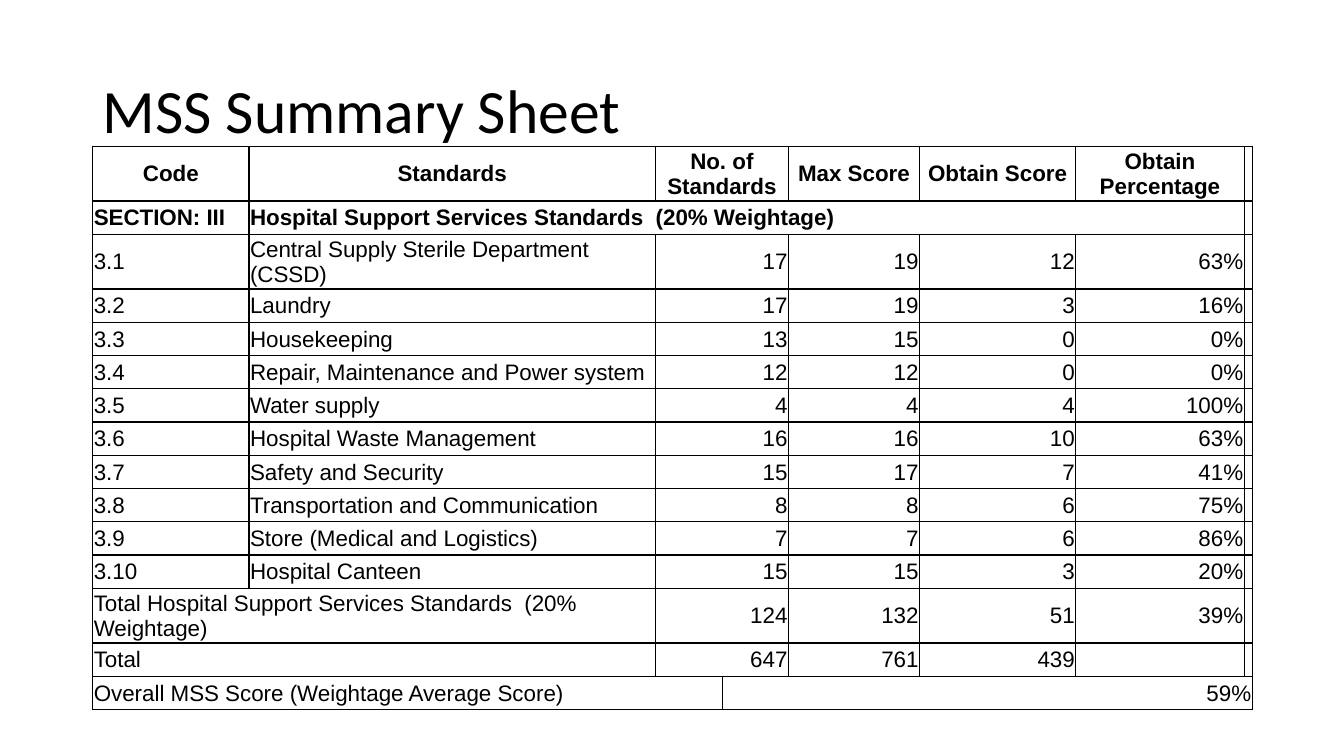
from dataclasses import dataclass

from lxml import etree
from pptx import Presentation
from pptx.dml.color import RGBColor
from pptx.enum.text import MSO_ANCHOR, PP_ALIGN
from pptx.oxml.ns import qn
from pptx.util import Inches, Pt

BLACK = RGBColor(0x00, 0x00, 0x00)
LEFT, MID, RIGHT = PP_ALIGN.LEFT, PP_ALIGN.CENTER, PP_ALIGN.RIGHT
CENTER = MSO_ANCHOR.MIDDLE

WIDTHS = [1.55, 4.03, 0.67, 0.65, 1.3, 1.55, 1.67, 0.08]
HEAD_H, ROW_H = 0.54, 0.33
EDGES = ("a:lnL", "a:lnR", "a:lnT", "a:lnB")
TITLE = {"name": "Calibri", "size": Pt(44), "bold": False}
BOLD = {"name": "Arial", "size": Pt(16), "bold": True}
PLAIN = {**BOLD, "bold": False}
CELL = {
    "margin_left": Inches(0.01),
    "margin_right": Inches(0.01),
    "margin_top": Inches(0.01),
    "margin_bottom": 0,
    "vertical_anchor": CENTER,
}


@dataclass
class Item:
    text: str
    span: int = 1
    align: PP_ALIGN = LEFT
    font: dict | None = None


HEADS = ["Code", "Standards", "No. of Standards", "Max Score",
         "Obtain Score", "Obtain Percentage"]
SCORES = [
    ("Central Supply Sterile Department (CSSD)", 17, 19, 12, "63%"),
    ("Laundry", 17, 19, 3, "16%"),
    ("Housekeeping", 13, 15, 0, "0%"),
    ("Repair, Maintenance and Power system", 12, 12, 0, "0%"),
    ("Water supply", 4, 4, 4, "100%"),
    ("Hospital Waste Management", 16, 16, 10, "63%"),
    ("Safety and Security", 15, 17, 7, "41%"),
    ("Transportation and Communication", 8, 8, 6, "75%"),
    ("Store (Medical and Logistics)", 7, 7, 6, "86%"),
    ("Hospital Canteen", 15, 15, 3, "20%"),
]
TOTALS = [
    ("Total Hospital Support Services Standards  (20% Weightage)",
     124, 132, 51, "39%"),
    ("Total", 647, 761, 439, ""),
]


def marks(values: tuple) -> list[Item]:
    return [Item(str(value), 2 if i == 0 else 1, RIGHT)
            for i, value in enumerate(values)] + [Item("")]


def build_rows() -> list[list[Item]]:
    head = [Item(text, 2 if i == 2 else 1, MID, BOLD)
            for i, text in enumerate(HEADS)]
    section = [
        Item("SECTION: III", font=BOLD),
        Item("Hospital Support Services Standards  (20% Weightage)", 6,
             font=BOLD),
        Item(""),
    ]
    body = [[Item(f"3.{i}"), Item(name), *marks(values)]
            for i, (name, *values) in enumerate(SCORES, 1)]
    sums = [[Item(name, 2), *marks(values)] for name, *values in TOTALS]
    last = [Item("Overall MSS Score (Weightage Average Score)", 3),
            Item("59%", 5, RIGHT)]
    return [head + [Item("")], section, *body, *sums, last]


def set_font(font, style: dict) -> None:
    for key, value in style.items():
        setattr(font, key, value)
    font.color.rgb = BLACK


def add_edges(cell) -> None:
    props = cell._tc.get_or_add_tcPr()
    for i, edge in enumerate(EDGES):
        line = etree.Element(qn(edge), w=str(Pt(1)))
        fill = etree.SubElement(line, qn("a:solidFill"))
        etree.SubElement(fill, qn("a:srgbClr"), val=str(BLACK))
        props.insert(i, line)


def fill_cell(cell, item: Item) -> None:
    para = cell.text_frame.paragraphs[0]
    para.alignment = item.align
    style = item.font or PLAIN
    if item.text:
        run = para.add_run()
        run.text = item.text
        set_font(run.font, style)
    else:
        end = etree.SubElement(para._p, qn("a:endParaRPr"))
        end.set("sz", str(int(style["size"].pt * 100)))


def add_title(slide) -> None:
    box = slide.shapes.add_textbox(
        Inches(0.92), Inches(0.4), Inches(11.5), Inches(1.45))
    frame = box.text_frame
    frame.word_wrap = True
    frame.vertical_anchor = CENTER
    para = frame.paragraphs[0]
    para.line_spacing = 0.9
    run = para.add_run()
    run.text = "MSS Summary Sheet"
    set_font(run.font, TITLE)


def add_scores(slide) -> None:
    rows = build_rows()
    high = HEAD_H + ROW_H * (len(rows) - 1)
    table = slide.shapes.add_table(
        len(rows), len(WIDTHS), Inches(0.92), Inches(1.45),
        Inches(sum(WIDTHS)), Inches(high)).table
    table.first_row = table.horz_banding = False
    for col, width in zip(table.columns, WIDTHS):
        col.width = Inches(width)
    for r, items in enumerate(rows):
        table.rows[r].height = Inches(ROW_H if r else HEAD_H)
        for c in range(len(WIDTHS)):
            cell = table.cell(r, c)
            for key, value in CELL.items():
                setattr(cell, key, value)
            cell.fill.background()
            add_edges(cell)
        c = 0
        for item in items:
            cell = table.cell(r, c)
            if item.span > 1:
                cell.merge(table.cell(r, c + item.span - 1))
            fill_cell(cell, item)
            c += item.span


def main() -> None:
    deck = Presentation()
    deck.slide_width, deck.slide_height = Inches(13.33), Inches(7.5)
    slide = deck.slides.add_slide(deck.slide_layouts[6])
    add_title(slide)
    add_scores(slide)
    deck.save("out.pptx")


if __name__ == "__main__":
    main()
